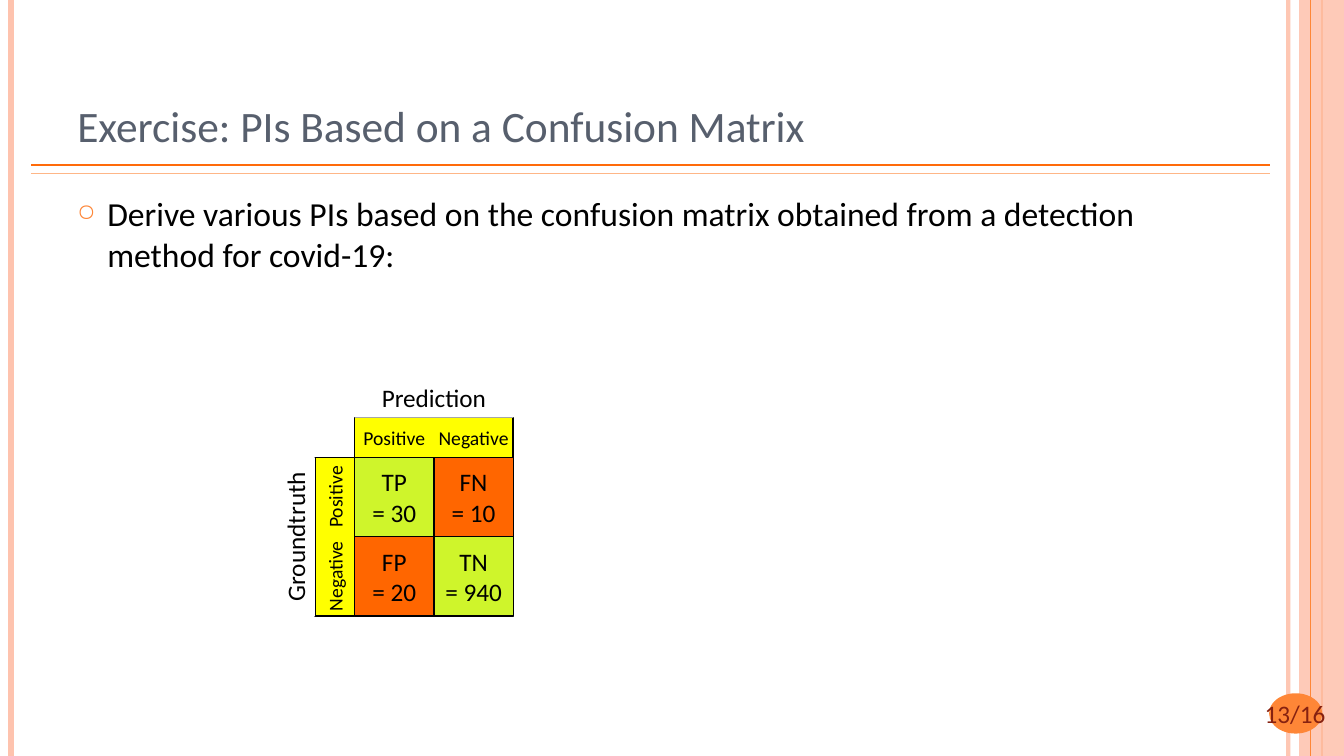
from dataclasses import dataclass

from lxml.etree import SubElement as Sub
from pptx import Presentation
from pptx.dml.color import RGBColor as Rgb
from pptx.enum.shapes import MSO_CONNECTOR as Conn, MSO_SHAPE as Geo
from pptx.enum.text import MSO_ANCHOR as Anchor, MSO_AUTO_SIZE as Auto, PP_ALIGN as Align
from pptx.oxml.ns import qn
from pptx.util import Pt


@dataclass(frozen=True)
class Theme:
    font: str = "Calibri"
    ink: str = "000000"
    slate: str = "575F6D"
    maroon: str = "862110"
    white: str = "FFFFFF"
    pink: str = "FEC3AE"
    orange: str = "FE8637"
    rule: str = "FF6B0A"
    pale: str = "FEB687"
    lime: str = "CFF52B"
    red: str = "FF6600"
    yellow: str = "FFFF00"
    head: int = 31
    body: int = 24
    cell: int = 18
    label: int = 14


T = Theme()
WIDE, HIGH = 960, 540


def fade(fill, alpha):
    tint = fill._xPr.find(qn("a:solidFill"))[0]
    Sub(tint, qn("a:alpha")).set("val", str(alpha * 1000))


def write(shape, text, size=T.cell, color=T.ink, align=Align.CENTER,
          anchor=Anchor.MIDDLE, inset=(0, 0), bullet=None):
    frame = shape.text_frame
    frame.auto_size = Auto.NONE
    frame.word_wrap = True
    frame.vertical_anchor = anchor
    frame.margin_left = frame.margin_right = Pt(inset[0])
    frame.margin_top = frame.margin_bottom = Pt(inset[1])
    frame.text = text
    for para in frame.paragraphs:
        para.alignment = align
        if bullet:
            mark(para, bullet)
        para.font.name, para.font.size = T.font, Pt(size)
        para.font.color.rgb = Rgb.from_string(color)


def mark(para, char, indent=21.6):
    props = para._p.get_or_add_pPr()
    props.set("marL", str(Pt(indent)))
    props.set("indent", str(-Pt(indent)))
    Sub(Sub(props, qn("a:buClr")), qn("a:srgbClr")).set("val", T.orange)
    Sub(props, qn("a:buSzPct")).set("val", "70000")
    Sub(props, qn("a:buChar")).set("char", char)


def block(slide, box, fill, geo=Geo.RECTANGLE, edge=None, turn=0):
    shape = slide.shapes.add_shape(geo, *map(Pt, box))
    shape.shadow.inherit = False
    shape.rotation = turn
    shape.fill.solid()
    shape.fill.fore_color.rgb = Rgb.from_string(fill)
    if edge:
        shape.line.color.rgb = Rgb.from_string(edge)
        shape.line.width = Pt(1)
    else:
        shape.line.fill.background()
    return shape


def note(slide, box, text, turn=0, **style):
    shape = slide.shapes.add_textbox(*map(Pt, box))
    shape.rotation = turn
    write(shape, text, **style)


def stroke(slide, ends, color, width, alpha=100):
    line = slide.shapes.add_connector(Conn.STRAIGHT, *map(Pt, ends))
    line.line.color.rgb = Rgb.from_string(color)
    line.line.width = Pt(width)
    props = line._element.spPr
    Sub(props, qn("a:effectLst"))
    if alpha < 100:
        fade(line.line.fill, alpha)


def stand(cx, cy, wide, high):
    """Box that fills the given upright area once turned by 270 degrees."""
    return cx - high / 2, cy - wide / 2, high, wide


# Side stripes, double rule and page badge
def frame(slide, box):
    left, top, wide, high = box
    right, foot = left + wide, top + high
    stroke(slide, (right - 39.8, top, right - 39.8, foot), T.pink, 3, 93)
    stroke(slide, (left + 8, top, left + 8, foot), T.pink, 4.5)
    stroke(slide, (right - 16, top, right - 16, foot), T.orange, 1.5)
    band = block(slide, (right - 32, top, 32, high), T.pink)
    fade(band.fill, 87)
    stroke(slide, (right - 24, top, right - 24, foot), T.orange, 0.75)
    for drop, color in ((118, T.rule), (123.8, T.pale)):
        stroke(slide, (left + 22.5, top + drop, right - 52.5, top + drop), color, 1)
    block(slide, (right - 53.5, foot - 44.8, 38, 28.8), T.orange, Geo.OVAL)
    note(slide, (right - 70, foot - 44.8, 70, 28.8), "13/16", color=T.maroon)


# Heading and task
def intro(slide, box):
    left, top, wide, high = box
    title = slide.shapes.title
    title.left, title.top, title.width, title.height = map(Pt, (left, top, wide, 90))
    write(title, "Exercise: PIs Based on a Confusion Matrix", size=T.head,
          color=T.slate, align=Align.LEFT, anchor=Anchor.BOTTOM, inset=(7.2, 3.6))
    note(slide, (left, top + 113, wide, high - 113),
         "Derive various PIs based on the confusion matrix obtained from a "
         "detection method for covid-19:", size=T.body, align=Align.LEFT,
         anchor=Anchor.TOP, inset=(7.2, 3.6), bullet="○")


# Confusion matrix: two label strips on the top and left of a square grid
def matrix(slide, box):
    left, top, side = box[:3]
    cell = side / 3
    bar = cell / 2
    x, y, span = left + 2 * bar, top + 2 * bar, 2 * cell
    grid = (("TP\n= 30", "FN\n= 10"), ("FP\n= 20", "TN\n= 940"))
    for row, texts in enumerate(grid):
        for col, text in enumerate(texts):
            fill = T.lime if row == col else T.red
            spot = block(slide, (x + col * cell, y + row * cell, cell, cell),
                         fill, edge=T.ink)
            write(spot, text)

    mid = y + cell
    block(slide, (x, y - bar, span, bar), T.yellow, edge=T.ink)
    block(slide, stand(x - bar / 2, mid, bar, span), T.yellow, edge=T.ink, turn=270)
    for step, text in enumerate(("Positive", "Negative")):
        note(slide, (x + step * cell, y - bar, cell, bar), text, size=T.label)
        note(slide, stand(x - bar / 2, y + (step + 0.5) * cell, bar, cell),
             text, turn=270, size=T.label)

    write(block(slide, (x, top, span, bar), T.white), "Prediction")
    truth = stand(left + bar / 2, mid, bar, span)
    write(block(slide, truth, T.white, turn=270), "Groundtruth")


def main():
    deck = Presentation()
    deck.slide_width, deck.slide_height = Pt(WIDE), Pt(HIGH)
    slide = deck.slides.add_slide(deck.slide_layouts[5])
    slide.background.fill.solid()
    slide.background.fill.fore_color.rgb = Rgb.from_string(T.white)
    frame(slide, (0, 0, WIDE, HIGH))
    intro(slide, (48, 21.6, 784, 488))
    matrix(slide, (196.6, 270, 170, 170))
    deck.save("out.pptx")


if __name__ == "__main__":
    main()
